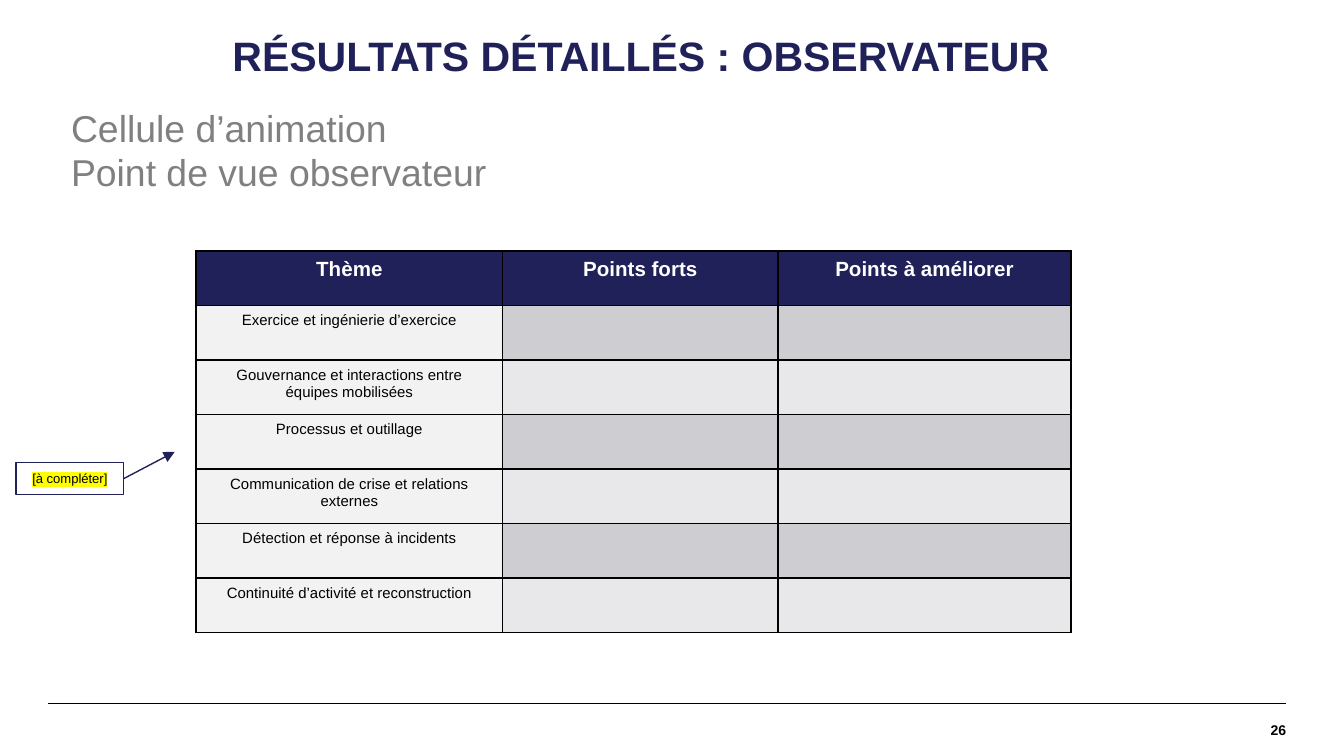
from typing import NamedTuple

from lxml.etree import SubElement
from pptx import Presentation
from pptx.dml.color import RGBColor
from pptx.enum.shapes import MSO_CONNECTOR as Connector, MSO_SHAPE as Shape
from pptx.enum.text import MSO_ANCHOR as Anchor, PP_ALIGN as Align
from pptx.oxml.ns import qn
from pptx.util import Inches, Pt

UNIT = Inches(0.1)
COLUMNS, ROWS = 100, 56.25
FONT = "Arial"
NAVY, BLACK, WHITE, GREY = "21215A", "000000", "FFFFFF", "808080"
THEME_FILL, BANDS = "F2F2F2", ("CDCDD2", "E8E8EA")
HEADERS = ("Thème", "Points forts", "Points à améliorer")
THEMES = (
    "Exercice et ingénierie d’exercice",
    "Gouvernance et interactions entre équipes mobilisées",
    "Processus et outillage",
    "Communication de crise et relations externes",
    "Détection et réponse à incidents",
    "Continuité d’activité et reconstruction",
)
THEME_COLUMNS = (22.8, 20.5, 21.8)


class Box(NamedTuple):
    left: float
    top: float
    width: float
    height: float

    def emu(self):
        return [grid(value) for value in self]


def grid(value):
    return round(value * UNIT)


def color(code):
    return RGBColor.from_string(code)


def write(frame, text, size=8, ink=BLACK, bold=False, align=Align.LEFT,
          anchor=Anchor.TOP, spacing=None, highlight=None):
    frame.word_wrap = True
    frame.vertical_anchor = anchor
    for index, line in enumerate(text.split("\n")):
        paragraph = frame.add_paragraph() if index else frame.paragraphs[0]
        paragraph.alignment = align
        if spacing:
            paragraph.line_spacing = spacing
        run = paragraph.add_run()
        run.text = line
        run.font.size = Pt(size)
        run.font.bold = bold
        run.font.color.rgb = color(ink)
        if highlight:
            properties = run.font._element
            mark = SubElement(properties, qn("a:highlight"))
            SubElement(mark, qn("a:srgbClr"), val=highlight)
        run.font.name = FONT


def add_text(slide, box, text, **style):
    frame = slide.shapes.add_textbox(*box.emu()).text_frame
    write(frame, text, **style)
    return frame


def add_line(slide, start, end, ink, width, arrow=False):
    points = [grid(value) for value in (*start, *end)]
    line = slide.shapes.add_connector(Connector.STRAIGHT, *points)
    line.line.color.rgb = color(ink)
    line.line.width = Pt(width)
    if arrow:
        SubElement(line.line._get_or_add_ln(), qn("a:tailEnd"), type="triangle")
    SubElement(line._element.spPr, qn("a:effectLst"))


def add_heading(slide, box):
    title = Box(box.left + 11.8, box.top, 84.7, 6.7)
    subtitle = Box(box.left, box.top + 6.3, 62.8, 7.7)
    add_text(slide, title, "RÉSULTATS DÉTAILLÉS : OBSERVATEUR", size=22, ink=NAVY,
             bold=True, anchor=Anchor.MIDDLE, spacing=0.9).margin_left = Inches(0.12)
    add_text(slide, subtitle, "Cellule d’animation\nPoint de vue observateur",
             size=20, ink=GREY)


def add_callout(slide, box):
    label = Box(box.left, box.top + 2, 8, 2.4)
    shape = slide.shapes.add_shape(Shape.RECTANGLE, *label.emu())
    shape.shadow.inherit = False
    shape.fill.background()
    shape.line.color.rgb = color(NAVY)
    shape.line.width = Pt(0.75)
    write(shape.text_frame, "[à compléter]", size=7, align=Align.CENTER,
          anchor=Anchor.MIDDLE, highlight="FFFF00")
    add_line(slide, (label.left + label.width, label.top + label.height / 2),
             (box.left + box.width, box.top + 1.2), NAVY, 0.75, arrow=True)


def format_cell(cell, fill):
    properties = cell._tc.get_or_add_tcPr()
    for side in ("lnL", "lnR", "lnT", "lnB"):
        border = SubElement(properties, qn(f"a:{side}"), w=str(Pt(1)))
        paint = SubElement(border, qn("a:solidFill"))
        SubElement(paint, qn("a:srgbClr"), val=BLACK)
    cell.fill.solid()
    cell.fill.fore_color.rgb = color(fill)


def add_results(slide, box):
    row_count = len(THEMES) + 1
    table = slide.shapes.add_table(row_count, len(HEADERS), *box.emu()).table
    table.first_row = table.horz_banding = False
    for column, width in zip(table.columns, THEME_COLUMNS):
        column.width = grid(width)
    for row in table.rows:
        row.height = grid(box.height / row_count)
    for index, header in enumerate(HEADERS):
        cell = table.cell(0, index)
        format_cell(cell, NAVY)
        write(cell.text_frame, header, size=11, ink=WHITE, bold=True, align=Align.CENTER)
    for index, theme in enumerate(THEMES):
        band = BANDS[index % 2]
        for position, fill in enumerate((THEME_FILL, band, band)):
            format_cell(table.cell(index + 1, position), fill)
        write(table.cell(index + 1, 0).text_frame, theme, align=Align.CENTER)


def add_footer(slide, box):
    right = box.left + box.width
    add_line(slide, (box.left, box.top), (right, box.top), BLACK, 0.8)
    number = Box(right - 14.8, box.top, 14.8, box.height)
    frame = add_text(slide, number, "26", size=7.5, bold=True,
                     align=Align.RIGHT, anchor=Anchor.MIDDLE)
    frame.margin_left = frame.margin_right = frame.margin_top = frame.margin_bottom = 0


def main():
    presentation = Presentation()
    presentation.slide_width = grid(COLUMNS)
    presentation.slide_height = grid(ROWS)
    slide = presentation.slides.add_slide(presentation.slide_layouts[6])
    add_footer(slide, Box(3.54, 52.33, 92.16, 3.9))
    add_heading(slide, Box(4.3, 1, 96.5, 14))
    add_callout(slide, Box(1.2, 32.42, 11.8, 4.4))
    add_results(slide, Box(14.6, 18.68, sum(THEME_COLUMNS), 28.4))
    presentation.save("out.pptx")


if __name__ == "__main__":
    main()
